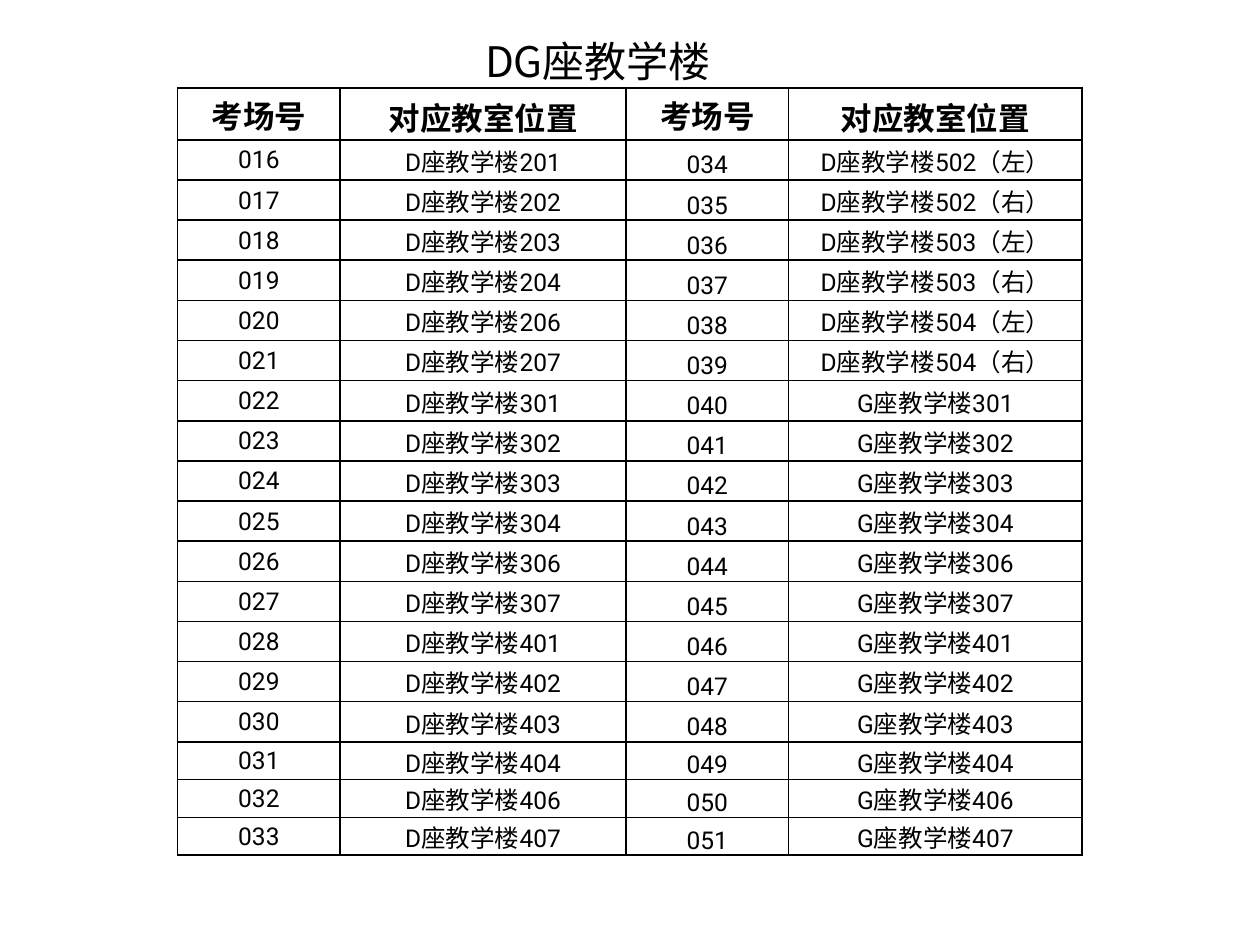
"""Build a slide listing the exam rooms in teaching buildings D and G."""
from lxml.etree import SubElement
from pptx import Presentation
from pptx.dml.color import RGBColor
from pptx.enum.text import MSO_ANCHOR as Anchor, PP_ALIGN as Align
from pptx.oxml import parse_xml
from pptx.oxml.ns import nsdecls, qn
from pptx.util import Inches, Pt

COLORS = {"text": "000000", "border": "000000", "background": "FFFFFF"}
CJK_FONT = "Noto Sans CJK SC"
NUMBER_FONT = "Roboto"


def add_text(para, text, size, font_name, bold=False):
    span = para.add_run()
    span.text = text
    span.font.size = Pt(size)
    span.font.bold = bold
    span.font.color.rgb = RGBColor.from_string(COLORS["text"])
    span.font.name = font_name
    SubElement(span.font._element, qn("a:ea"), typeface=CJK_FONT)


def add_borders(cell):
    properties = cell._tc.get_or_add_tcPr()
    for index, side in enumerate("LRTB"):
        properties.insert(index, parse_xml(
            f'<a:ln{side} {nsdecls("a")} w="{Pt(1)}"><a:solidFill>'
            f'<a:srgbClr val="{COLORS["border"]}"/></a:solidFill></a:ln{side}>'))


deck = Presentation()
deck.slide_width, deck.slide_height = Inches(10), Inches(7.5)
page = deck.slides.add_slide(deck.slide_layouts[5])
page.background.fill.solid()
page.background.fill.fore_color.rgb = RGBColor.from_string(COLORS["background"])

title = page.shapes.title
title.left, title.top = Inches(3.75), Inches(0.23)
title.width, title.height = Inches(2.58), Inches(0.5)
title.text_frame.vertical_anchor = Anchor.TOP
title_para = title.text_frame.paragraphs[0]
title_para.alignment = Align.LEFT
add_text(title_para, "DG座教学楼", 24, CJK_FONT)

endings = (1, 2, 3, 4, 6, 7)
rooms = [f"D座教学楼{floor}0{end}" for floor in (2, 3, 4) for end in endings]
rooms += [f"D座教学楼50{end}（{half}）" for end in (2, 3, 4) for half in "左右"]
rooms += [f"G座教学楼{floor}0{end}" for floor in (3, 4) for end in endings]
exams = [(f"{number:03}", room) for number, room in enumerate(rooms, start=16)]
half_count = len(exams) // 2
rows = [("考场号", "对应教室位置") * 2]
rows += [left + right for left, right in zip(exams[:half_count], exams[half_count:])]

column_widths = [1.29, 2.27, 1.29, 2.33]
row_heights = [0.41] + [4.78 / 15] * 15 + [0.3] * 3
table = page.shapes.add_table(
    len(rows), len(column_widths), Inches(1.41), Inches(0.7),
    Inches(sum(column_widths)), Inches(sum(row_heights))).table
table.first_row = table.horz_banding = False
for column, width in zip(table.columns, column_widths):
    column.width = Inches(width)
for row, height in zip(table.rows, row_heights):
    row.height = Inches(height)

for row_index, values in enumerate(rows):
    is_header = row_index == 0
    bottom_columns = (1, 3) if is_header else (2,)
    for column_index, value in enumerate(values):
        cell = table.cell(row_index, column_index)
        cell.fill.background()
        add_borders(cell)
        cell.margin_left = cell.margin_right = cell.margin_top = Inches(0.01)
        cell.margin_bottom = 0
        cell.vertical_anchor = Anchor.BOTTOM if column_index in bottom_columns else Anchor.MIDDLE
        para = cell.text_frame.paragraphs[0]
        para.alignment = Align.CENTER
        if is_header:
            add_text(para, value, 18, CJK_FONT, bold=True)
        else:
            add_text(para, value, 14, NUMBER_FONT)

deck.save("out.pptx")
